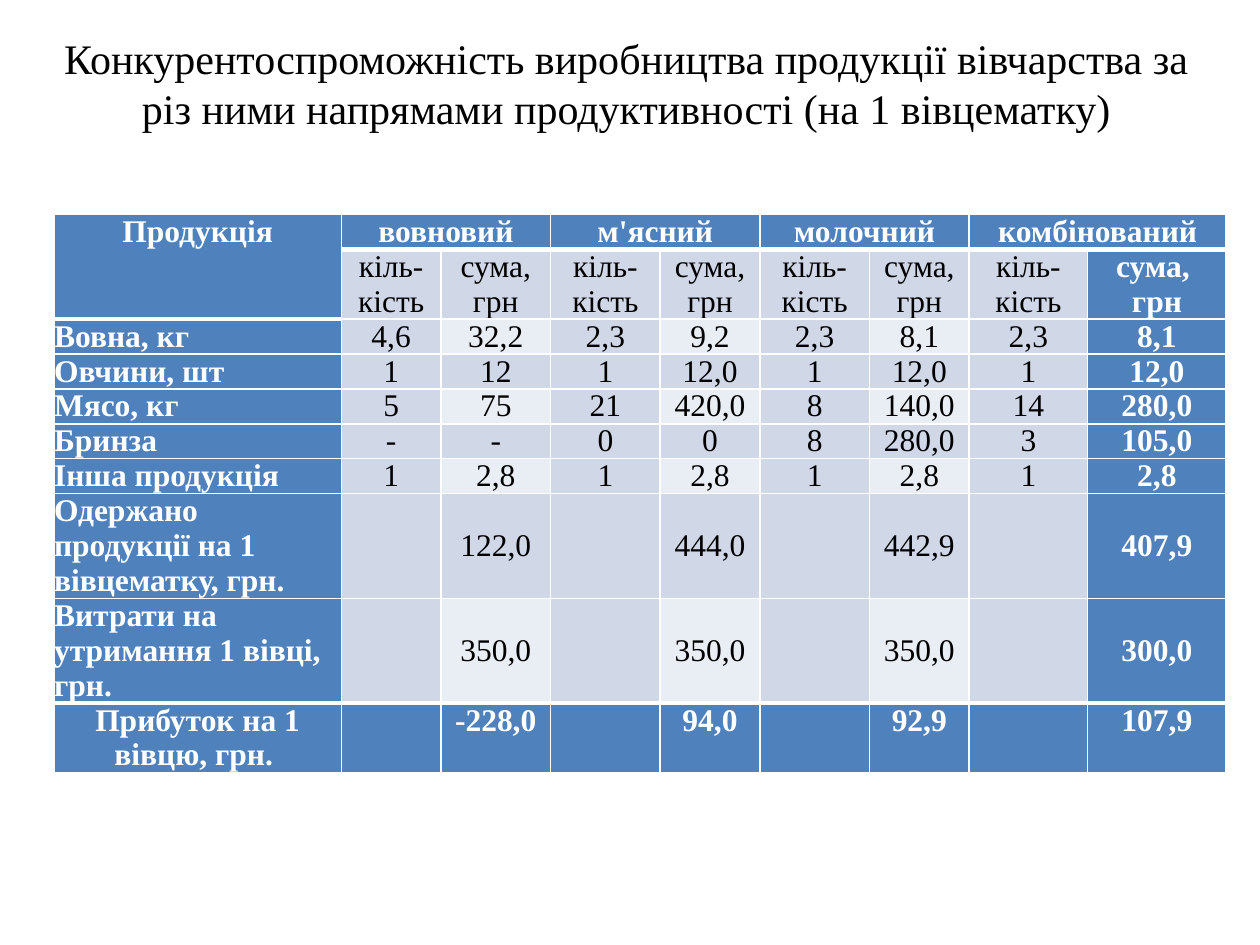
import pptx
import pptx.dml.color
import pptx.enum.text
import pptx.oxml.ns
import pptx.util
from lxml import etree

Cm, Pt = pptx.util.Cm, pptx.util.Pt
RGB = pptx.dml.color.RGBColor.from_string
ALIGN = pptx.enum.text.PP_ALIGN
ANCHOR = pptx.enum.text.MSO_ANCHOR

COLORS = {"head": "4F81BD", "light": "E9EDF4", "mid": "D0D8E8",
          "white": "FFFFFF", "black": "000000"}
FONT = "Times New Roman"
LINE = 0.7  # height of one table text line, cm
COL_WIDTHS = [5.79, 2.01, 2.21, 2.21, 2.01, 2.21, 2.01, 2.39, 2.79]
LINES_PER_ROW = [1, 2, 1, 1, 1, 1, 1, 3, 3, 2]
ROWS = [
    ["Продукція", "вовновий", "", "м'ясний", "", "молочний", "", "комбінований", ""],
    [""] + ["кіль- кість", "сума, грн"] * 3 + ["кіль- кість", "сума, \vгрн"],
    ["Вовна, кг", "4,6", "32,2", "2,3", "9,2", "2,3", "8,1", "2,3", "8,1"],
    ["Овчини, шт", "1", "12", "1", "12,0", "1", "12,0", "1", "12,0"],
    ["Мясо, кг", "5", "75", "21", "420,0", "8", "140,0", "14", "280,0"],
    ["Бринза", "-", "-", "0", "0", "8", "280,0", "3", "105,0"],
    ["Інша продукція", "1", "2,8", "1", "2,8", "1", "2,8", "1", "2,8"],
    ["Одержано продукції на 1 вівцематку, грн.",
     "", "122,0", "", "444,0", "", "442,9", "", "407,9"],
    ["Витрати на утримання 1 вівці, грн.",
     "", "350,0", "", "350,0", "", "350,0", "", "300,0"],
    ["Прибуток на 1 вівцю, грн. ",
     "", "-228,0", "", "94,0", "", "92,9", "", "107,9"],
]
LAST_ROW, LAST_COL = len(ROWS) - 1, len(COL_WIDTHS) - 1


def set_borders(cell, widths):
    """Add white borders; widths maps a side letter (L, R, T, B) to points."""
    tc_pr = cell._tc.get_or_add_tcPr()
    qn = pptx.oxml.ns.qn
    for side, width in widths.items():
        ln = etree.SubElement(tc_pr, qn("a:ln" + side), w=str(Pt(width)))
        fill = etree.SubElement(ln, qn("a:solidFill"))
        etree.SubElement(fill, qn("a:srgbClr"), val=COLORS["white"])


def top_width(r, c):
    """Thick rules lie under the header and above the totals row."""
    thick = r == LAST_ROW or (r == 1 and c > 0) or (r == 2 and c == 0)
    return 3 if thick else 1


prs = pptx.Presentation()
prs.slide_width, prs.slide_height = Cm(25.4), Cm(19.05)
s = prs.slides.add_slide(prs.slide_layouts[6])

# Table
frame = s.shapes.add_table(len(ROWS), len(COL_WIDTHS), Cm(1.09), Cm(4.32),
                           Cm(sum(COL_WIDTHS)), Cm(LINE * sum(LINES_PER_ROW)))
table = frame.table
table.first_row = table.horz_banding = False
for column, width in zip(table.columns, COL_WIDTHS):
    column.width = Cm(width)
for row, lines in zip(table.rows, LINES_PER_ROW):
    row.height = Cm(LINE * lines)

table.cell(0, 0).merge(table.cell(1, 0))
for c in range(1, LAST_COL, 2):
    table.cell(0, c).merge(table.cell(0, c + 1))

for r, values in enumerate(ROWS):
    for c, value in enumerate(values):
        cell = table.cell(r, c)
        is_head = r in (0, LAST_ROW) or c in (0, LAST_COL)
        bottom = 3 if (r, c) == (0, 0) else top_width(r + 1, c)
        set_borders(cell, {"L": 1, "R": 1, "T": top_width(r, c), "B": bottom})
        if is_head:
            fill = "head"
        else:
            fill = "light" if r > 1 and r % 2 == 0 and c % 2 == 0 else "mid"
        cell.fill.solid()
        cell.fill.fore_color.rgb = RGB(COLORS[fill])
        cell.margin_left = cell.margin_right = 0
        cell.margin_top = cell.margin_bottom = 0
        if LINES_PER_ROW[r] == 3:
            cell.vertical_anchor = ANCHOR.MIDDLE
        cell.text = value
        p = cell.text_frame.paragraphs[0]
        is_label = c == 0 and 1 < r < LAST_ROW
        p.alignment = ALIGN.LEFT if is_label else ALIGN.CENTER
        p.font.name, p.font.size, p.font.bold = FONT, Pt(18), is_head
        p.font.color.rgb = RGB(COLORS["white" if is_head else "black"])

# Title
title = s.shapes.add_textbox(Cm(0.71), Cm(0.61), Cm(23.8), Cm(3.07))
tf = title.text_frame
tf.word_wrap = True
tf.vertical_anchor = ANCHOR.TOP
tf.margin_left, tf.margin_right = Cm(0.28), Cm(0.25)
tf.margin_top, tf.margin_bottom = Cm(0.05), 0
p = tf.paragraphs[0]
p.text = ("Конкурентоспроможність виробництва продукції вівчарства за "
          "різ ними напрямами продуктивності (на 1 вівцематку)")
p.alignment = ALIGN.CENTER
p.line_spacing = Pt(28.6)
p.font.name, p.font.size = FONT, Pt(24)
p.font.color.rgb = RGB(COLORS["black"])

prs.save("out.pptx")
